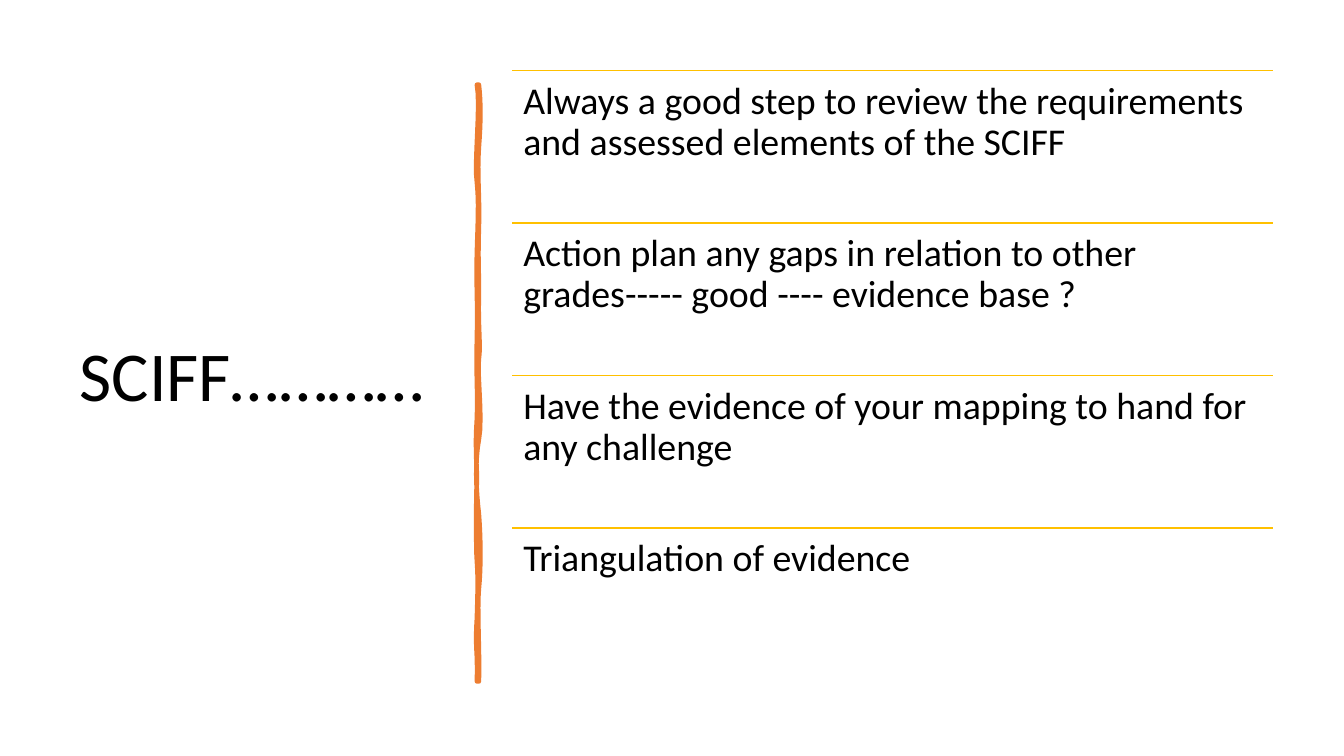
import dataclasses

import lxml.etree
import pptx
import pptx.dml.color
import pptx.enum.shapes
import pptx.enum.text
import pptx.oxml.ns
import pptx.util

Inches = pptx.util.Inches
FONT = "Calibri"
BLACK, ORANGE, GOLD = "000000", "ED7D31", "FFC000"
LEFT, TOP, WIDTH, PITCH = 5.08, 0.7, 7.55, 1.513
BAR_RIGHT, BAR_LEFT, BAR_TOP, BAR_BOTTOM = 4.75, 4.73, 0.84, 6.76


@dataclasses.dataclass
class Point:
    text: str
    row: int

    @property
    def top(self) -> float:
        return TOP + self.row * PITCH


@dataclasses.dataclass
class Wave:
    """One curve along an edge of the bar: two control points and the end height."""
    x1: float
    y1: float
    x2: float
    y2: float
    end: float


POINTS = [Point(text, row) for row, text in enumerate([
    "Always a good step to review the requirements and assessed elements of the SCIFF",
    "Action plan any gaps in relation to other grades----- good ---- evidence base ?",
    "Have the evidence of your mapping to hand for any challenge",
    "Triangulation of evidence",
])]

RIGHT_EDGE = [
    Wave(4.77, 1.02, 4.77, 1.19, 1.46),
    Wave(4.73, 1.73, 4.76, 1.95, 2.26),
    Wave(4.74, 2.57, 4.75, 2.62, 2.94),
    Wave(4.74, 3.25, 4.77, 3.42, 3.56),
    Wave(4.73, 3.7, 4.79, 4.14, 4.36),
    Wave(4.71, 4.57, 4.72, 4.84, 5.1),
    Wave(4.77, 5.36, 4.77, 5.64, 5.84),
    Wave(4.73, 6.03, 4.76, 6.5, BAR_BOTTOM),
]
LEFT_EDGE = [
    Wave(4.74, 6.46, 4.71, 6.44, 6.13),
    Wave(4.74, 5.83, 4.74, 5.7, 5.57),
    Wave(4.72, 5.44, 4.72, 4.95, 4.77),
    Wave(4.73, 4.59, 4.71, 4.45, 4.15),
    Wave(4.74, 3.86, 4.72, 3.73, 3.35),
    Wave(4.74, 2.98, 4.72, 2.81, 2.5),
    Wave(4.74, 2.18, 4.75, 2, 1.81),
    Wave(4.7, 1.63, 4.77, 1.04, BAR_TOP),
]


def rgb(value: str) -> pptx.dml.color.RGBColor:
    return pptx.dml.color.RGBColor.from_string(value)


def trace(x: float, start: float, waves: list[Wave], steps: int = 8) -> list[tuple[float, float]]:
    points = [(x, start)]
    for w in waves:
        for i in range(1, steps + 1):
            t = i / steps
            a, b, c, d = (1 - t) ** 3, 3 * t * (1 - t) ** 2, 3 * t * t * (1 - t), t ** 3
            points.append((a * x + b * w.x1 + c * w.x2 + d * x,
                           a * start + b * w.y1 + c * w.y2 + d * w.end))
        start = w.end
    return points


def write(sp, text: str, size: float) -> None:
    tf = sp.text_frame
    tf.word_wrap = True
    tf.auto_size = pptx.enum.text.MSO_AUTO_SIZE.NONE
    p = tf.paragraphs[0]
    p.alignment = pptx.enum.text.PP_ALIGN.LEFT
    p.line_spacing = 0.9
    r = p.add_run()
    r.text = text
    r.font.name = FONT
    r.font.size = pptx.util.Pt(size)
    r.font.color.rgb = rgb(BLACK)


def add_title(slide) -> None:
    sp = slide.shapes.title
    sp.left, sp.top, sp.width, sp.height = map(Inches, (0.69, 0.7, 3.74, 6.11))
    sp.text_frame.vertical_anchor = pptx.enum.text.MSO_ANCHOR.MIDDLE
    write(sp, "SCIFF…………", 50)


def add_bar(slide) -> None:
    outline = (trace(BAR_RIGHT, BAR_TOP, RIGHT_EDGE)
               + trace(BAR_LEFT, BAR_BOTTOM, LEFT_EDGE))
    start, *rest = [(Inches(x), Inches(y)) for x, y in outline]
    builder = slide.shapes.build_freeform(*start)
    builder.add_line_segments(rest, close=True)
    sp = builder.convert_to_shape()
    sp.shadow.inherit = False
    sp.fill.solid()
    sp.fill.fore_color.rgb = rgb(ORANGE)
    sp.line.color.rgb = rgb(ORANGE)
    sp.line.width = pptx.util.Pt(3.25)
    lxml.etree.SubElement(sp.line._get_or_add_ln(), pptx.oxml.ns.qn("a:round"))


def add_point(slide, point: Point) -> None:
    x, y = Inches(LEFT), Inches(point.top)
    rule = slide.shapes.add_connector(
        pptx.enum.shapes.MSO_CONNECTOR.STRAIGHT, x, y, Inches(LEFT + WIDTH), y)
    rule.line.color.rgb = rgb(GOLD)
    rule.line.width = pptx.util.Pt(1)
    lxml.etree.SubElement(rule._element.spPr, pptx.oxml.ns.qn("a:effectLst"))
    sp = slide.shapes.add_textbox(x, y, Inches(WIDTH), Inches(PITCH))
    tf = sp.text_frame
    tf.margin_left = tf.margin_top = tf.margin_right = tf.margin_bottom = Inches(0.11)
    write(sp, point.text, 27)


def main() -> None:
    """Build the SCIFF slide and save it."""
    prs = pptx.Presentation()
    prs.slide_width, prs.slide_height = Inches(13.33), Inches(7.5)
    slide = prs.slides.add_slide(prs.slide_layouts[5])
    add_title(slide)
    add_bar(slide)
    for point in POINTS:
        add_point(slide, point)
    prs.save("out.pptx")


if __name__ == "__main__":
    main()
